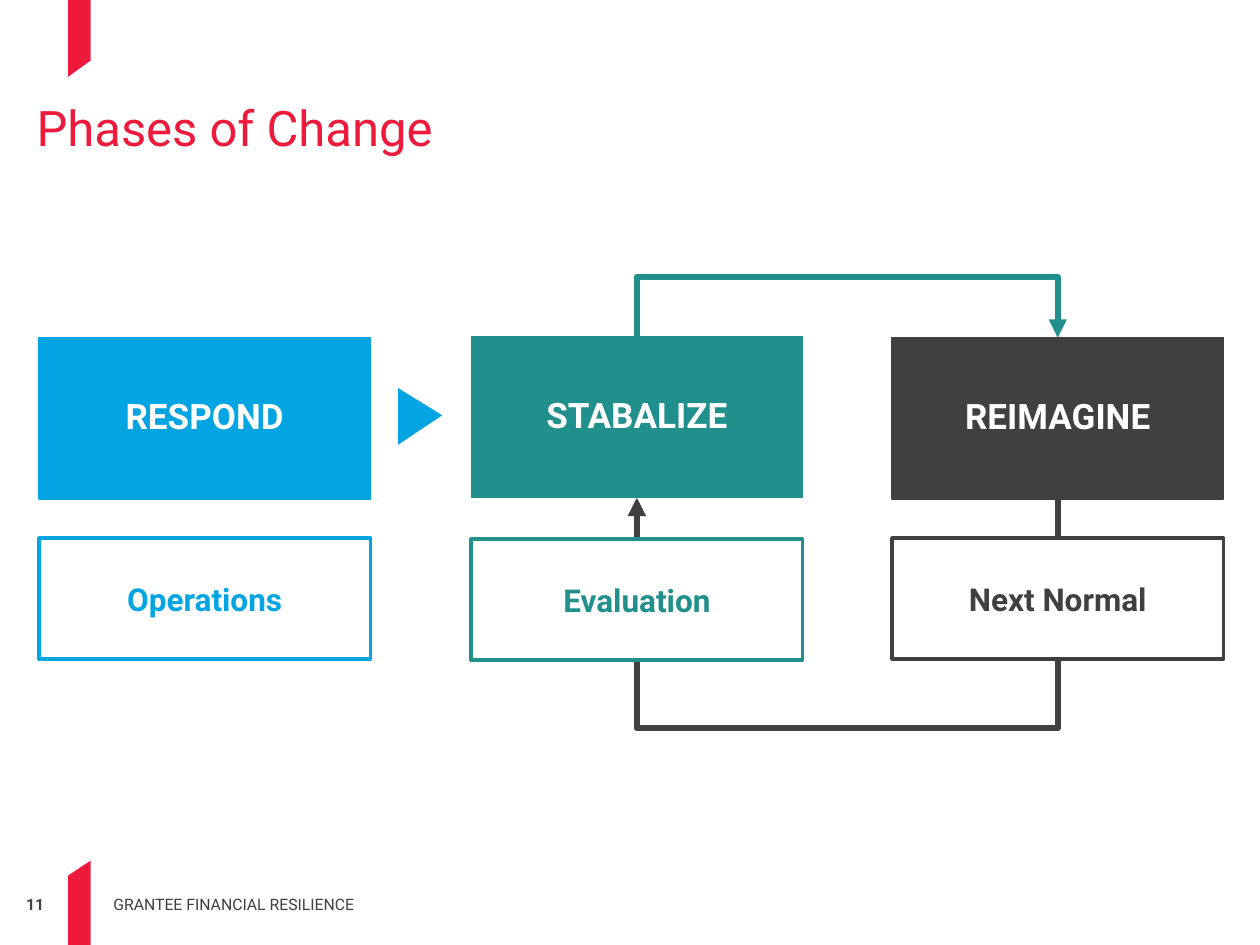
"""Build the Phases of Change slide: three phase cards joined by a feedback loop."""
from dataclasses import dataclass

from lxml import etree
from pptx import Presentation
from pptx import util as u
from pptx.dml.color import RGBColor
from pptx.enum import shapes, text
from pptx.oxml import ns


@dataclass(frozen=True)
class Theme:
    font: str = "Roboto"
    red: str = "ED1A3B"
    blue: str = "02A5E2"
    teal: str = "218F8B"
    gray: str = "404040"
    white: str = "FFFFFF"
    title: float = 28
    phase: float = 20
    detail: float = 18
    footer: float = 9


THEME = Theme()
WIDTH, HEIGHT = 10, 7.5
CARD_WIDTH, PHASE_HEIGHT, DETAIL_HEIGHT = 2.63, 1.28, 0.96
TITLE = "Phases of Change"
CARDS = [
    {"left": 0.31, "phase": "RESPOND", "phase_top": 2.68, "detail": "Operations",
     "detail_top": 4.27, "color": THEME.blue, "detail_fill": None},
    {"left": 3.74, "phase": "STABALIZE", "phase_top": 2.67, "detail": "Evaluation",
     "detail_top": 4.28, "color": THEME.teal, "detail_fill": THEME.white},
    {"left": 7.08, "phase": "REIMAGINE", "phase_top": 2.68, "detail": "Next Normal",
     "detail_top": 4.27, "color": THEME.gray, "detail_fill": THEME.white},
]
LOOPS = [
    {"edge": PHASE_HEIGHT, "bend": 5.81, "color": THEME.gray, "arrow": "headEnd"},
    {"edge": 0, "bend": 2.19, "color": THEME.teal, "arrow": "tailEnd"},
]
MARKS = [
    [(0.72, 0.48), (0.72, 0), (0.54, 0), (0.54, 0.61)],
    [(0.54, 6.95), (0.54, HEIGHT), (0.72, HEIGHT), (0.72, 6.83)],
]
FOOTERS = [
    ("11", (0, 7.1, 0.35, 0.15), True, text.PP_ALIGN.RIGHT, text.MSO_ANCHOR.TOP),
    ("GRANTEE FINANCIAL RESILIENCE", (0.9, 6.95, 3.55, 0.3), False,
     text.PP_ALIGN.LEFT, text.MSO_ANCHOR.BOTTOM),
]


def inches(values):
    return [u.Inches(value) for value in values]


def write(box, words, size, color, bold=False, align=text.PP_ALIGN.LEFT,
          anchor=text.MSO_ANCHOR.TOP, margin=0, spacing=1.0):
    frame = box.text_frame
    frame.text = words
    para = frame.paragraphs[0]
    formats = [
        (frame, {"word_wrap": True, "auto_size": text.MSO_AUTO_SIZE.NONE,
                 "vertical_anchor": anchor}),
        (frame, {f"margin_{side}": u.Inches(margin)
                 for side in ("left", "top", "right", "bottom")}),
        (para, {"alignment": align, "line_spacing": spacing}),
        (para.runs[0].font, {"name": THEME.font, "size": u.Pt(size), "bold": bold}),
    ]
    for target, values in formats:
        for name, value in values.items():
            setattr(target, name, value)
    para.runs[0].font.color.rgb = RGBColor.from_string(color)


def paint(shape, fill=None, line=None, weight=0.75):
    shape.shadow.inherit = False
    if fill:
        shape.fill.solid()
        shape.fill.fore_color.rgb = RGBColor.from_string(fill)
    else:
        shape.fill.background()
    if line:
        shape.line.color.rgb = RGBColor.from_string(line)
        shape.line.width = u.Pt(weight)
    else:
        shape.line.fill.background()


def add_mark(page, points):
    pen = page.shapes.build_freeform(*inches(points[0]), scale=1.0)
    pen.add_line_segments([inches(point) for point in points[1:]], close=True)
    paint(pen.convert_to_shape(), THEME.red)


def add_loop(page, start, end, bend, color, arrow):
    (x1, y1), (x2, y2) = start, end
    rise, run = y2 - y1, x2 - x1
    left, top = (x1 + x2 - rise) / 2, (y1 + y2 - run) / 2
    link = page.shapes.add_connector(
        shapes.MSO_CONNECTOR.ELBOW, *inches((left, top, left + rise, top + run)))
    link.line.color.rgb = RGBColor.from_string(color)
    link.line.width = u.Pt(3.5)
    props = link._element.spPr
    frame = props.find(ns.qn("a:xfrm"))
    frame.set("rot", str(270 * 60000))
    frame.set("flipH", "1")
    guides = props.find(ns.qn("a:prstGeom")).get_or_add_avLst()
    ratio = round((bend - y1) / rise * 100000)
    etree.SubElement(guides, ns.qn("a:gd"), name="adj1", fmla=f"val {ratio}")
    etree.SubElement(link.line._get_or_add_ln(), ns.qn(f"a:{arrow}"), type="triangle")
    etree.SubElement(props, ns.qn("a:effectLst"))


def add_card(page, card):
    centered = {"bold": True, "align": text.PP_ALIGN.CENTER,
                "anchor": text.MSO_ANCHOR.MIDDLE, "margin": 0.1}
    color = card["color"]
    phase = page.shapes.add_shape(
        shapes.MSO_SHAPE.RECTANGLE,
        *inches((card["left"], card["phase_top"], CARD_WIDTH, PHASE_HEIGHT)))
    paint(phase, color, color)
    write(phase, card["phase"], THEME.phase, THEME.white, spacing=0.9, **centered)
    detail = page.shapes.add_shape(
        shapes.MSO_SHAPE.ROUNDED_RECTANGLE,
        *inches((card["left"], card["detail_top"], CARD_WIDTH, DETAIL_HEIGHT)))
    detail.adjustments[0] = 0
    paint(detail, card["detail_fill"], color, 2)
    write(detail, card["detail"], THEME.detail, color, **centered)


def main():
    deck = Presentation()
    deck.slide_width, deck.slide_height = inches((WIDTH, HEIGHT))
    page = deck.slides.add_slide(deck.slide_layouts[5])
    title = page.shapes.title
    title.left, title.top, title.width, title.height = inches((0.29, 0.75, 9.42, 1.05))
    write(title, TITLE, THEME.title, THEME.red, spacing=1.05)
    for points in MARKS:
        add_mark(page, points)
    for words, place, bold, align, anchor in FOOTERS:
        box = page.shapes.add_textbox(*inches(place))
        write(box, words, THEME.footer, THEME.gray, bold, align, anchor)
    for loop in LOOPS:
        start, end = [(card["left"] + CARD_WIDTH / 2, card["phase_top"] + loop["edge"])
                      for card in CARDS[1:]]
        add_loop(page, start, end, loop["bend"], loop["color"], loop["arrow"])
    for card in CARDS:
        add_card(page, card)
    pointer = page.shapes.add_shape(
        shapes.MSO_SHAPE.ISOSCELES_TRIANGLE, *inches((3.11, 3.13, 0.45, 0.35)))
    pointer.rotation = 90
    pointer.adjustments[0] = 0.48
    paint(pointer, THEME.blue)
    deck.save("out.pptx")


if __name__ == "__main__":
    main()
